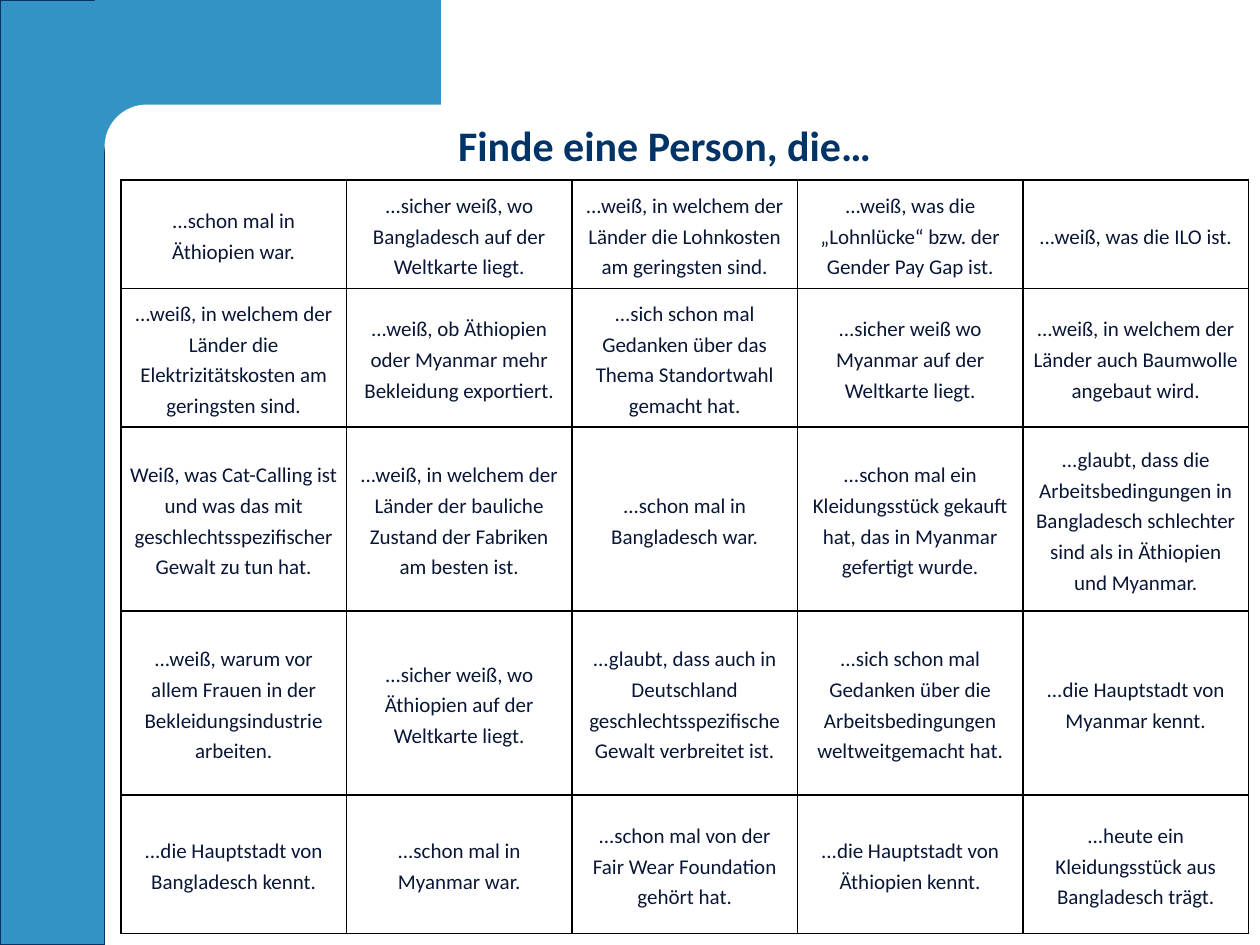
from lxml import etree
from pptx import Presentation
from pptx.dml.color import RGBColor
from pptx.enum.shapes import MSO_SHAPE
from pptx.enum.text import MSO_ANCHOR, MSO_AUTO_SIZE, PP_ALIGN
from pptx.oxml.ns import qn
from pptx.util import Inches, Pt

RECT, ROUNDED = MSO_SHAPE.RECTANGLE, MSO_SHAPE.ROUNDED_RECTANGLE
MIDDLE, BOTTOM = MSO_ANCHOR.MIDDLE, MSO_ANCHOR.BOTTOM
CENTER, NO_AUTOFIT = PP_ALIGN.CENTER, MSO_AUTO_SIZE.NONE

BLUE = RGBColor(0x34, 0x93, 0xC5)
NAVY = RGBColor(0x00, 0x33, 0x66)
INK = RGBColor(0x0A, 0x16, 0x35)
WHITE = RGBColor(0xFF, 0xFF, 0xFF)
BORDER = "000000"

TITLE = "Finde eine Person, die…"
PROMPTS = [
    ["...schon mal in Äthiopien war.",
     "...sicher weiß, wo Bangladesch auf der Weltkarte liegt.",
     "...weiß, in welchem der Länder die Lohnkosten am geringsten sind.",
     "...weiß, was die „Lohnlücke“ bzw. der Gender Pay Gap ist.",
     "...weiß, was die ILO ist."],
    ["...weiß, in welchem der Länder die Elektrizitätskosten am geringsten sind.",
     "...weiß, ob Äthiopien oder Myanmar mehr Bekleidung exportiert.",
     "...sich schon mal Gedanken über das Thema Standortwahl gemacht hat.",
     "...sicher weiß wo Myanmar auf der Weltkarte liegt.",
     "...weiß, in welchem der Länder auch Baumwolle angebaut wird."],
    ["Weiß, was Cat-Calling ist und was das mit geschlechtsspezifischer Gewalt zu tun hat.",
     "...weiß, in welchem der Länder der bauliche Zustand der Fabriken am besten ist.",
     "...schon mal in Bangladesch war.",
     "...schon mal ein Kleidungsstück gekauft hat, das in Myanmar gefertigt wurde.",
     "...glaubt, dass die Arbeitsbedingungen in Bangladesch schlechter sind als in Äthiopien und Myanmar."],
    ["...weiß, warum vor allem Frauen in der Bekleidungsindustrie arbeiten.",
     "...sicher weiß, wo Äthiopien auf der Weltkarte liegt.",
     "...glaubt, dass auch in Deutschland geschlechtsspezifische Gewalt verbreitet ist.",
     "...sich schon mal Gedanken über die Arbeitsbedingungen weltweitgemacht hat.",
     "...die Hauptstadt von Myanmar kennt."],
    ["...die Hauptstadt von Bangladesch kennt.",
     "...schon mal in Myanmar war.",
     "...schon mal von der Fair Wear Foundation gehört hat.",
     "...die Hauptstadt von Äthiopien kennt.",
     "...heute ein Kleidungsstück aus Bangladesch trägt."],
]
ROW_HEIGHTS = [0.86, 1.1, 1.46, 1.46, 1.1]
COLUMN_WIDTH = 1.79
PANELS = [
    (RECT, (0, 0, 0.83, 7.5), BLUE, NAVY),
    (RECT, (0.75, 0, 2.75, 1.17), BLUE, None),
    (ROUNDED, (0.83, 0.83, 5.58, 0.67), WHITE, None),
]
TITLE_FORMAT = {"name": "Calibri", "size": Pt(24), "bold": True}
CELL_FORMAT = {"name": "Calibri", "size": Pt(12), "bold": False}
CELL_LAYOUT = {"vertical_anchor": MIDDLE, "margin_left": Inches(0.07),
               "margin_right": Inches(0.07), "margin_top": 0, "margin_bottom": 0}


def set_all(target, values):
    for name, value in values.items():
        setattr(target, name, value)


def write(tf, text, spacing, font, color):
    tf.text = text
    p = tf.paragraphs[0]
    p.alignment, p.line_spacing = CENTER, spacing
    r = p.runs[0]
    set_all(r.font, font)
    r.font.color.rgb = color


def add_panel(s, kind, box, fill, line):
    sp = s.shapes.add_shape(kind, *map(Inches, box))
    sp.shadow.inherit = False
    sp.fill.solid()
    sp.fill.fore_color.rgb = fill
    if line is None:
        sp.line.fill.background()
    else:
        sp.line.color.rgb = line
        sp.line.width = Pt(0.75)
    if kind == ROUNDED:
        sp.adjustments[0] = 0.5


def add_borders(cell):
    props = cell._tc.get_or_add_tcPr()
    for i, side in enumerate(("lnL", "lnR", "lnT", "lnB")):
        ln = etree.Element(qn(f"a:{side}"), w=str(Pt(1)))
        fill = etree.SubElement(ln, qn("a:solidFill"))
        etree.SubElement(fill, qn("a:srgbClr"), val=BORDER)
        props.insert(i, ln)


def add_grid(s):
    columns = len(PROMPTS[0])
    box = (0.96, 1.43, columns * COLUMN_WIDTH, sum(ROW_HEIGHTS))
    table = s.shapes.add_table(len(PROMPTS), columns, *map(Inches, box)).table
    for column in table.columns:
        column.width = Inches(COLUMN_WIDTH)
    for row, height, prompts in zip(table.rows, ROW_HEIGHTS, PROMPTS):
        row.height = Inches(height)
        for cell, prompt in zip(row.cells, prompts):
            set_all(cell, CELL_LAYOUT)
            cell.fill.solid()
            cell.fill.fore_color.rgb = WHITE
            write(cell.text_frame, prompt, 1.2, CELL_FORMAT, INK)
            add_borders(cell)


def place_title(s):
    title = s.shapes.title
    title.left, title.top, title.width, title.height = map(Inches, (0.9, 0.7, 8.75, 0.7))
    set_all(title.text_frame, {"vertical_anchor": BOTTOM, "auto_size": NO_AUTOFIT,
                               "word_wrap": True})
    write(title.text_frame, TITLE, 0.9, TITLE_FORMAT, NAVY)
    tree = title.element.getparent()
    tree.append(title.element)


def main():
    prs = Presentation()
    prs.slide_width, prs.slide_height = Inches(10), Inches(7.5)
    s = prs.slides.add_slide(prs.slide_layouts[5])
    for panel in PANELS:
        add_panel(s, *panel)
    place_title(s)
    add_grid(s)
    prs.save("out.pptx")


if __name__ == "__main__":
    main()
